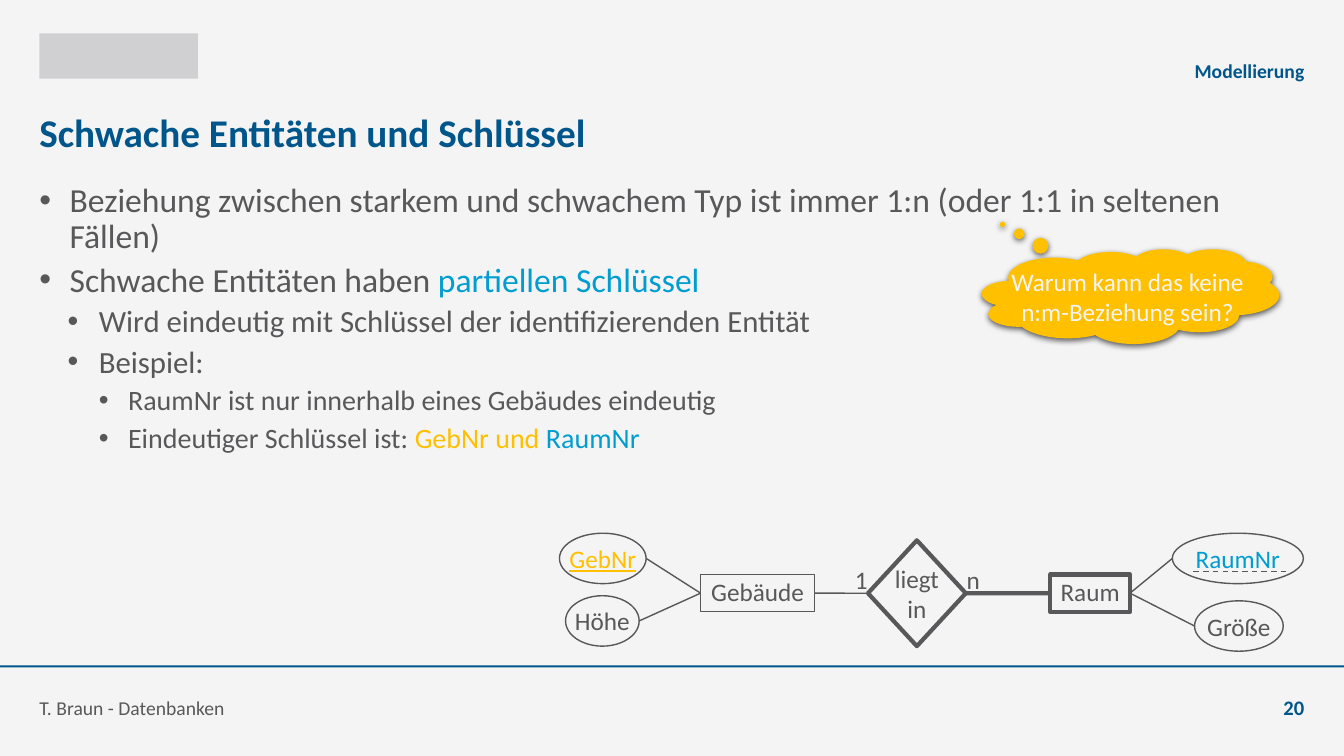
from lxml import etree
from pptx import Presentation
from pptx.dml.color import RGBColor
from pptx.enum.dml import MSO_LINE
from pptx.enum.shapes import MSO_CONNECTOR, MSO_SHAPE
from pptx.enum.text import MSO_ANCHOR, MSO_AUTO_SIZE, PP_ALIGN
from pptx.oxml.ns import qn
from pptx.util import Emu, Inches, Pt

OVAL, RECT, DIAMOND = MSO_SHAPE.OVAL, MSO_SHAPE.RECTANGLE, MSO_SHAPE.DIAMOND
CLOUD = MSO_SHAPE.CLOUD_CALLOUT
STRAIGHT, DASH = MSO_CONNECTOR.STRAIGHT, MSO_LINE.DASH
LEFT, CENTER, RIGHT = PP_ALIGN.LEFT, PP_ALIGN.CENTER, PP_ALIGN.RIGHT
TOP, MIDDLE, BOTTOM = MSO_ANCHOR.TOP, MSO_ANCHOR.MIDDLE, MSO_ANCHOR.BOTTOM
NO_FIT = MSO_AUTO_SIZE.NONE

PAPER = RGBColor(0xF4, 0xF4, 0xF4)
GREY = RGBColor(0x58, 0x58, 0x5A)
LIGHT_GREY = RGBColor(0xD0, 0xD0, 0xD2)
NAVY = RGBColor(0x00, 0x56, 0x8A)
CYAN = RGBColor(0x00, 0x9D, 0xD1)
AMBER = RGBColor(0xFF, 0xC0, 0x00)

FONT = "Calibri"
SLIDE_WIDTH, SLIDE_HEIGHT = Inches(13.333), Inches(7.5)
MARGIN, CONTENT_WIDTH = 2.93, 94.13
HEADER_HEIGHT, FOOTER_TOP = 5.2, 90
LABEL_HEIGHT, OVAL_HEIGHT = 4.93, 6.67

LEVELS = [(24, 0.3, -0.3), (22, 0.59, -0.31), (20, 0.88, -0.29)]
POINTS = [
    (0, [("Beziehung zwischen starkem und schwachem Typ ist immer 1:n "
          "(oder 1:1 in seltenen Fällen)", GREY)]),
    (0, [("Schwache Entitäten haben ", GREY), ("partiellen Schlüssel", CYAN)]),
    (1, [("Wird eindeutig mit Schlüssel der identifizierenden Entität", GREY)]),
    (1, [("Beispiel:", GREY)]),
    (2, [("RaumNr ist nur innerhalb eines Gebäudes eindeutig", GREY)]),
    (2, [("Eindeutiger Schlüssel ist: ", GREY), ("GebNr und ", AMBER),
         ("RaumNr", CYAN)]),
]


def across(percent):
    return Emu(round(SLIDE_WIDTH * percent / 100))


def down(percent):
    return Emu(round(SLIDE_HEIGHT * percent / 100))


def box(left, top, width, height):
    return across(left), down(top), across(width), down(height)


def place(holder, area):
    holder.left, holder.top, holder.width, holder.height = box(*area)


def set_frame(frame, anchor, wrap, margins=(0, 0)):
    frame.auto_size = NO_FIT
    frame.word_wrap = wrap
    frame.vertical_anchor = anchor
    frame.margin_left = frame.margin_right = Inches(margins[0])
    frame.margin_top = frame.margin_bottom = Inches(margins[1])


def set_font(font, size, color, bold=False, underline=False):
    font.name, font.size = FONT, Pt(size)
    font.bold, font.underline = bold, underline
    font.color.rgb = color


def write(frame, words, size, color, align, bold=False, underline=False,
          line_spacing=1.0):
    paragraph = frame.paragraphs[0]
    paragraph.text = words
    paragraph.alignment = align
    paragraph.line_spacing = line_spacing
    set_font(paragraph.font, size, color, bold, underline)


def add_label(slide, words, area, size=18, color=GREY, align=CENTER,
              anchor=BOTTOM, wrap=True, margins=(0, 0), **style):
    frame = slide.shapes.add_textbox(*box(*area)).text_frame
    set_frame(frame, anchor, wrap, margins)
    write(frame, words, size, color, align, **style)


def add_block(slide, kind, area, fill=None, line_width=0):
    block = slide.shapes.add_shape(kind, *box(*area))
    block.shadow.inherit = False
    if fill is None:
        block.fill.background()
    else:
        block.fill.solid()
        block.fill.fore_color.rgb = fill
    if line_width:
        block.line.color.rgb = GREY
        block.line.width = Pt(line_width)
    else:
        block.line.fill.background()
    return block


def add_node(slide, kind, words, area, line_width=1, fill=None, color=GREY,
             underline=False, line_spacing=1.0):
    node = add_block(slide, kind, area, fill, line_width)
    set_frame(node.text_frame, MIDDLE, False)
    write(node.text_frame, words, 18, color, CENTER, underline=underline,
          line_spacing=line_spacing)
    return node


def add_line(slide, start, end, width=1):
    line = slide.shapes.add_connector(STRAIGHT, *start, *end)
    line.line.color.rgb = GREY
    line.line.width = Pt(width)
    etree.SubElement(line._element.spPr, qn("a:effectLst"))
    return line


def link_attribute(slide, attribute, entity, entity_side):
    edge = attribute.left + (attribute.width if entity_side == 1 else 0)
    start = edge, attribute.top + attribute.height // 2
    add_line(slide, start, start).end_connect(entity, entity_side)


def link_entities(slide, first, second, width):
    line = add_line(slide, (0, 0), (0, 0), width)
    line.begin_connect(first, 3)
    line.end_connect(second, 1)


def add_bullet(paragraph, left, hanging):
    properties = paragraph._p.get_or_add_pPr()
    properties.set("marL", str(Inches(left)))
    properties.set("indent", str(Inches(hanging)))
    etree.SubElement(properties, qn("a:buFont")).set("typeface", "Arial")
    etree.SubElement(properties, qn("a:buChar")).set("char", "•")


def fill_points(body):
    place(body, (MARGIN, 24.27, CONTENT_WIDTH, 61.87))
    frame = body.text_frame
    set_frame(frame, TOP, True)
    for index, (level, parts) in enumerate(POINTS):
        point = frame.add_paragraph() if index else frame.paragraphs[0]
        size, left, hanging = LEVELS[level]
        point.level = level
        point.line_spacing = 0.9
        point.space_before = Pt(5 if index else 0)
        add_bullet(point, left, hanging)
        set_font(point.font, size, GREY)
        for words, color in parts:
            run = point.add_run()
            run.text = words
            if color != GREY:
                run.font.color.rgb = color


def add_diagram(slide):
    height = add_node(slide, OVAL, "Höhe", (42.08, 78.8, 5.48, OVAL_HEIGHT))
    building_key = add_node(slide, OVAL, "GebNr", (41.63, 70.53, 6.45, OVAL_HEIGHT),
                            color=AMBER, underline=True)
    area = add_node(slide, OVAL, "Größe", (88.88, 79.47, 6.6, OVAL_HEIGHT))
    room_key = add_node(slide, OVAL, "RaumNr", (87.23, 70.53, 9.75, OVAL_HEIGHT),
                        color=CYAN)
    partial_key_mark = add_line(slide, (across(88.8), down(75.6)),
                                (across(95.78), down(75.6)))
    partial_key_mark.line.dash_style = DASH
    building = add_node(slide, RECT, "Gebäude", (52.13, 76, 8.48, LABEL_HEIGHT),
                        fill=PAPER, line_spacing=0.9)
    room = add_node(slide, RECT, "Raum", (78.15, 76, 5.93, LABEL_HEIGHT), 3,
                    PAPER, line_spacing=0.9)
    lies_in = add_node(slide, DIAMOND, "liegt\nin", (64.58, 71.47, 7.28, 14), 3, PAPER)
    for cardinality, left in (("n", 71.18), ("1", 62.85)):
        add_label(slide, cardinality, (left, 74.4, 2.48, LABEL_HEIGHT), anchor=TOP,
                  wrap=False, margins=(0.1, 0.05), line_spacing=0.9)
    for attribute, entity, side in ((building_key, building, 1), (height, building, 1),
                                    (room_key, room, 3), (area, room, 3)):
        link_attribute(slide, attribute, entity, side)
    link_entities(slide, building, lies_in, 1)
    link_entities(slide, lies_in, room, 3)


def add_question(slide):
    cloud = add_block(slide, CLOUD, (73.05, 32.93, 22.13, 12.53), AMBER)
    cloud.adjustments[0], cloud.adjustments[1] = -0.43, -0.76
    effects = cloud._element.spPr.find(qn("a:effectLst"))
    shadow = etree.SubElement(effects, qn("a:outerShdw"), blurRad=str(Pt(4.5)),
                              dist=str(Pt(1.5)), dir="5400000", rotWithShape="0")
    black = etree.SubElement(shadow, qn("a:srgbClr"), val="000000")
    etree.SubElement(black, qn("a:alpha"), val="63000")
    add_label(slide, "Warum kann das keine n:m-Beziehung sein?",
              (73.35, 34.53, 21.08, 9.47), color=PAPER, anchor=TOP,
              margins=(0.1, 0.05))


def main():
    deck = Presentation()
    deck.slide_width, deck.slide_height = SLIDE_WIDTH, SLIDE_HEIGHT
    slide = deck.slides.add_slide(deck.slide_layouts[1])
    slide.background.fill.solid()
    slide.background.fill.fore_color.rgb = PAPER

    add_block(slide, RECT, (MARGIN, 4.4, 11.8, 6), LIGHT_GREY)
    add_block(slide, RECT, (0, 88, 100, 0.27), NAVY)
    title = slide.shapes.title
    place(title, (MARGIN, 13.2, CONTENT_WIDTH, 8.4))
    set_frame(title.text_frame, MIDDLE, True)
    write(title.text_frame, "Schwache Entitäten und Schlüssel", 28, NAVY, LEFT, True)
    fill_points(slide.placeholders[1])

    add_diagram(slide)
    add_question(slide)
    add_label(slide, "Modellierung", (29.48, 5.73, 67.58, HEADER_HEIGHT), 14, NAVY,
              RIGHT, bold=True)
    add_label(slide, "T. Braun - Datenbanken", (MARGIN, FOOTER_TOP, 69, HEADER_HEIGHT),
              14, GREY, LEFT)
    add_label(slide, "20", (91.13, FOOTER_TOP, 5.93, HEADER_HEIGHT), 14.7, NAVY,
              RIGHT, bold=True)
    deck.save("out.pptx")


if __name__ == "__main__":
    main()
